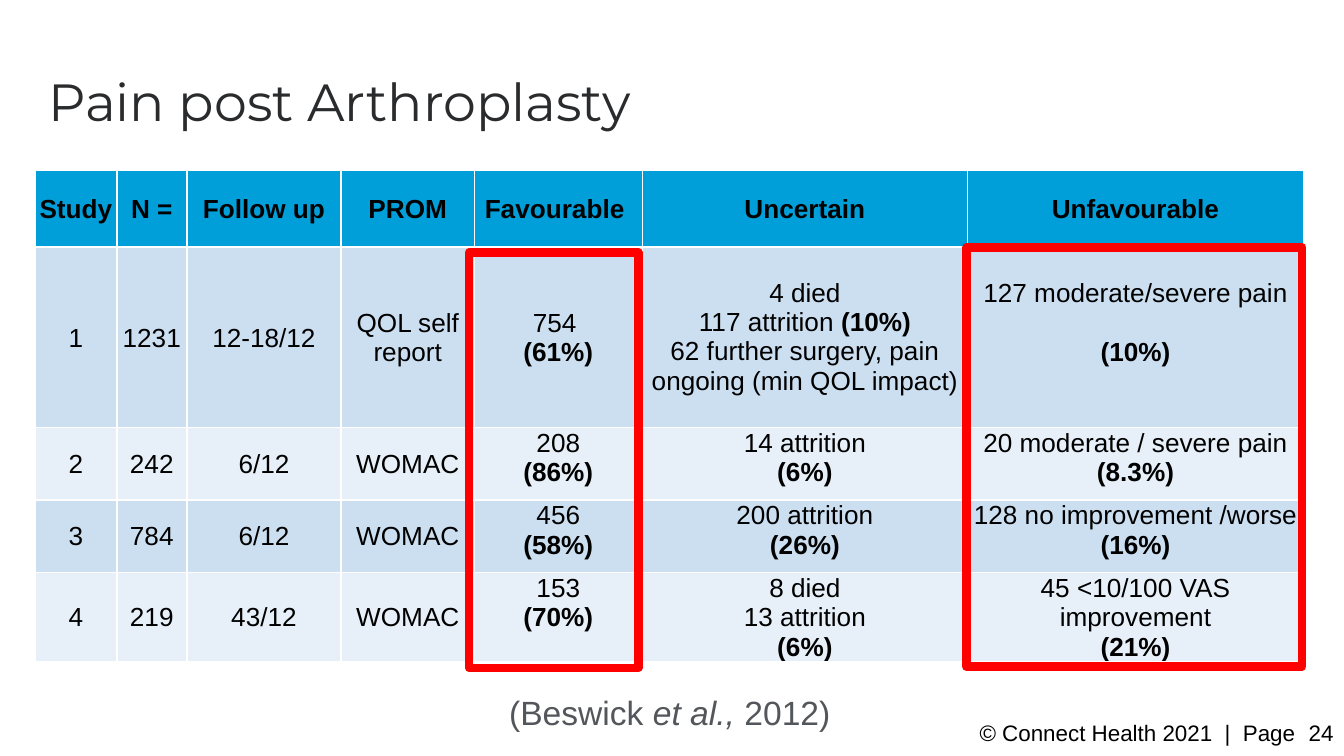
"""Build the "Pain post Arthroplasty" slide with a table of study outcomes."""
from typing import NamedTuple

from pptx import Presentation
from pptx.dml.color import RGBColor
from pptx.enum.shapes import MSO_SHAPE
from pptx.enum.text import MSO_ANCHOR as ANCHOR, PP_ALIGN as ALIGN
from pptx.util import Pt

BLACK = RGBColor(0x00, 0x00, 0x00)
TITLE_INK = RGBColor(0x2A, 0x2B, 0x2D)
CITATION_GREY = RGBColor(0x53, 0x56, 0x5A)
HEADER_BLUE = RGBColor(0x00, 0x9F, 0xDA)
BANDS = (RGBColor(0xCC, 0xDF, 0xF1), RGBColor(0xE7, 0xF0, 0xF8))
RED = RGBColor(0xFF, 0x00, 0x00)
LINE_GAP = 16


class Box(NamedTuple):
    left: float
    top: float
    width: float
    height: float

    def lengths(self) -> list:
        return [Pt(v) for v in self]


class Label(NamedTuple):
    box: Box
    runs: tuple
    size: float
    color: RGBColor
    align: ALIGN = ALIGN.LEFT
    anchor: ANCHOR = ANCHOR.TOP


class Study(NamedTuple):
    number: str
    patients: str
    follow_up: str
    prom: str
    favourable: str
    uncertain: str
    unfavourable: str


TITLE_BOX = Box(18.72, 37.44, 353.5, 33.84)
TABLE_BOX = Box(18.72, 91.44, 679.7, 254.2)
COLUMNS = (43.92, 37.44, 82.8, 71.28, 90, 174.24, 180)
HEADER_HEIGHT, FIRST_HEIGHT, ROW_HEIGHT = 41.04, 96.48, 38.88
TOP_COLUMNS = (4, 5, 6)

HEADER = Study("Study", "N =", "Follow up", "PROM", "Favourable ", "Uncertain", "Unfavourable")
STUDIES = (
    Study("1", "1231", "12-18/12", "QOL self report", "754 \n*(61%)*",
          "4 died\n117 attrition *(10%)*\n62 further surgery, pain ongoing (min QOL impact)",
          "127 moderate/severe pain\n*(10%)*"),
    Study("2", "242", "6/12", "WOMAC", "208\n*(86%)*", "14 attrition\n*(6%)*",
          "20 moderate / severe pain\n*(8.3%)*"),
    Study("3", "784", "6/12", "WOMAC", "456\n*(58%)*", "200 attrition\n*(26%)*",
          "128 no improvement /worse\n*(16%)*"),
    Study("4", "219", "43/12", "WOMAC", "153\n*(70%)*", "8 died\n13 attrition\n*(6%)*",
          "45 <10/100 VAS improvement\n*(21%)*"),
)
LABELS = (
    Label(Box(517.68, 381.6, 191.5, 21.6), ("© Connect Health 2021  |  Page",), 12, BLACK),
    Label(Box(432, 381.6, 289.44, 21.6), ("24",), 12, BLACK, ALIGN.RIGHT, ANCHOR.MIDDLE),
    Label(Box(265.68, 367.2, 239.76, 28.8), ("(Beswick ", "et al., ", "2012)"), 18, CITATION_GREY),
)
HIGHLIGHTS = (Box(251.28, 135.36, 90.72, 222.48), Box(517.68, 132.48, 180, 224.64))


def set_font(p, name: str, size: float, color: RGBColor) -> None:
    p.font.name = name
    p.font.size = Pt(size)
    p.font.color.rgb = color


def fill_cell(cell, text: str, color: RGBColor, anchor: ANCHOR, bold: bool = False) -> None:
    cell.fill.solid()
    cell.fill.fore_color.rgb = color
    cell.vertical_anchor = anchor
    cell.margin_left = cell.margin_right = cell.margin_top = Pt(0.72)
    cell.margin_bottom = Pt(0)
    tf = cell.text_frame
    for i, line in enumerate(text.split("\n")):
        p = tf.add_paragraph() if i else tf.paragraphs[0]
        p.alignment = ALIGN.CENTER
        set_font(p, "Arial", 14, BLACK)
        for j, part in enumerate(line.split("*")):
            if part:
                r = p.add_run()
                r.text = part
                r.font.bold = bold or j % 2 == 1


def add_study_table(s) -> None:
    tbl = s.shapes.add_table(len(STUDIES) + 1, len(COLUMNS), *TABLE_BOX.lengths()).table
    for column, width in zip(tbl.columns, COLUMNS):
        column.width = Pt(width)
    heights = (HEADER_HEIGHT, FIRST_HEIGHT) + (ROW_HEIGHT,) * (len(STUDIES) - 1)
    for row, height in zip(tbl.rows, heights):
        row.height = Pt(height)
    for c, text in enumerate(HEADER):
        fill_cell(tbl.cell(0, c), text, HEADER_BLUE, ANCHOR.MIDDLE, bold=True)
    for i, study in enumerate(STUDIES):
        for c, text in enumerate(study):
            top = c in TOP_COLUMNS and (i > 0 or c > 4)
            fill_cell(tbl.cell(i + 1, c), text, BANDS[i % 2], ANCHOR.TOP if top else ANCHOR.MIDDLE)
    for c in (5, 6):
        tbl.cell(1, c).margin_top = Pt(LINE_GAP + 0.72)
    tbl.cell(1, 6).text_frame.paragraphs[1].space_before = Pt(LINE_GAP)


def add_label(s, label: Label) -> None:
    tf = s.shapes.add_textbox(*label.box.lengths()).text_frame
    tf.word_wrap = True
    tf.vertical_anchor = label.anchor
    p = tf.paragraphs[0]
    p.alignment = label.align
    set_font(p, "Arial", label.size, label.color)
    for text in label.runs:
        r = p.add_run()
        r.text = text
        if text.startswith("et al."):
            r.font.italic = True


def add_highlight(s, box: Box) -> None:
    sp = s.shapes.add_shape(MSO_SHAPE.RECTANGLE, *box.lengths())
    sp.shadow.inherit = False
    sp.fill.background()
    sp.line.color.rgb = RED
    sp.line.width = Pt(4.5)


def add_title(s, text: str) -> None:
    sp = s.shapes.title
    sp.left, sp.top, sp.width, sp.height = TITLE_BOX.lengths()
    tf = sp.text_frame
    tf.text = text
    tf.word_wrap = True
    tf.vertical_anchor = ANCHOR.TOP
    p = tf.paragraphs[0]
    p.alignment = ALIGN.LEFT
    p.line_spacing = 0.9
    set_font(p, "Montserrat", 28, TITLE_INK)


def main() -> None:
    prs = Presentation()
    prs.slide_width, prs.slide_height = Pt(720), Pt(405)
    s = prs.slides.add_slide(prs.slide_layouts[5])
    add_title(s, "Pain post Arthroplasty")
    add_study_table(s)
    for label in LABELS:
        add_label(s, label)
    for box in HIGHLIGHTS:
        add_highlight(s, box)
    prs.save("out.pptx")


if __name__ == "__main__":
    main()
